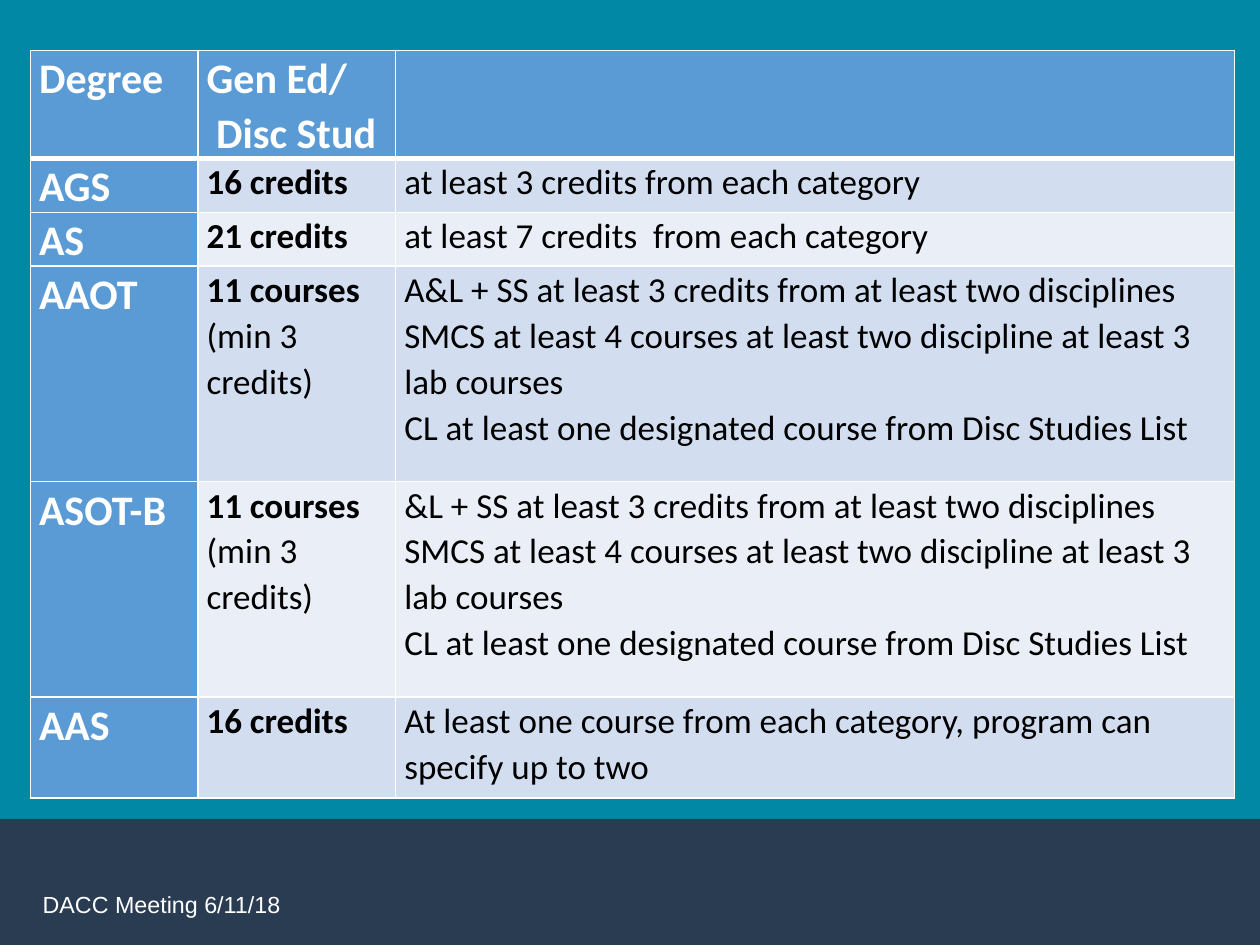
from lxml.etree import SubElement
from pptx import Presentation
from pptx.dml.color import RGBColor
from pptx.enum.shapes import MSO_SHAPE
from pptx.oxml.ns import qn
from pptx.util import Inches, Pt

# Content: each cell is a list of paragraphs
HEAD = (["Degree"], ["Gen Ed/\v Disc Stud"], [])
MIN = "(min 3 credits)"
LAB = "SMCS at least 4 courses at least two discipline at least 3 lab courses"
LIST = "CL at least one designated course from Disc Studies List"
ROWS = [
    HEAD,
    (["AGS"], ["16 credits"], ["at least 3 credits from each category"]),
    (["AS"], ["21 credits"], ["at least 7 credits  from each category"]),
    (["AAOT"], ["11 courses", MIN],
     ["A&L + SS at least 3 credits from at least two disciplines", LAB, LIST]),
    (["ASOT-B"], ["11 courses", MIN],
     ["&L + SS at least 3 credits from at least two disciplines", LAB, LIST]),
    (["AAS"], ["16 credits"],
     ["At least one course from each category, program can specify up to two"]),
]
WIDTHS = [1.33, 1.57, 6.66]
HEIGHTS = [0.8, 0.4, 0.4, 1.71, 1.71, 0.8]
FOOTER = "DACC Meeting 6/11/18"

TEAL, NAVY, BLUE = "0088A4", "2A3C52", "5B9BD5"
BANDS = ["EAEFF7", "D2DEEF"]
WHITE, BLACK = "FFFFFF", "000000"


def paint(fill, color):
    fill.solid()
    fill.fore_color.rgb = RGBColor.from_string(color)


def write(para, text, size=20, color=BLACK, bold=False, font="Calibri", space=None):
    para.text = text
    para.line_spacing = space
    for run in para.runs:
        run.font.name, run.font.size, run.font.bold = font, Pt(size), bold
        run.font.color.rgb = RGBColor.from_string(color)


def band(slide, top, height, color):
    shape = slide.shapes.add_shape(
        MSO_SHAPE.RECTANGLE, 0, Inches(top), Inches(10), Inches(height))
    shape.shadow.inherit = False
    paint(shape.fill, color)
    shape.line.fill.background()


def border(cell, below):
    props = cell._tc.get_or_add_tcPr()
    for side, width in zip("LRTB", (1, 1, 1, below)):
        line = SubElement(props, qn(f"a:ln{side}"), w=str(Pt(width)))
        fill = SubElement(line, qn("a:solidFill"))
        SubElement(fill, qn("a:srgbClr"), val=WHITE)


def fill_cell(cell, row, col, lines):
    label = row == 0 or col == 0
    cell.margin_left = cell.margin_right = Inches(0.07)
    cell.margin_top = cell.margin_bottom = 0
    border(cell, 3 if row == 0 else 1)
    paint(cell.fill, BLUE if label else BANDS[row % 2])
    frame = cell.text_frame
    for i, text in enumerate(lines):
        para = frame.add_paragraph() if i else frame.paragraphs[0]
        if label:
            write(para, text, size=24, color=WHITE, bold=True, space=1.07)
        else:
            write(para, text, bold=col == 1 and i == 0, space=1.07)


def main():
    prs = Presentation()
    prs.slide_width, prs.slide_height = Inches(10), Inches(7.5)
    slide = prs.slides.add_slide(prs.slide_layouts[6])

    # Background and footer
    band(slide, 0, 6.89, TEAL)
    band(slide, 6.5, 1, NAVY)
    box = slide.shapes.add_textbox(Inches(0.24), Inches(7.02), Inches(5.59), Inches(0.33))
    box.text_frame.word_wrap = True
    write(box.text_frame.paragraphs[0], FOOTER, size=13.3, color=WHITE, font="Arial")

    # Degree table
    table = slide.shapes.add_table(
        len(ROWS), len(WIDTHS), Inches(0.24), Inches(0.4),
        Inches(sum(WIDTHS)), Inches(sum(HEIGHTS))).table
    for col, width in zip(table.columns, WIDTHS):
        col.width = Inches(width)
    for row, height in zip(table.rows, HEIGHTS):
        row.height = Inches(height)
    for r, cells in enumerate(ROWS):
        for c, lines in enumerate(cells):
            fill_cell(table.cell(r, c), r, c, lines)

    prs.save("out.pptx")


if __name__ == "__main__":
    main()
